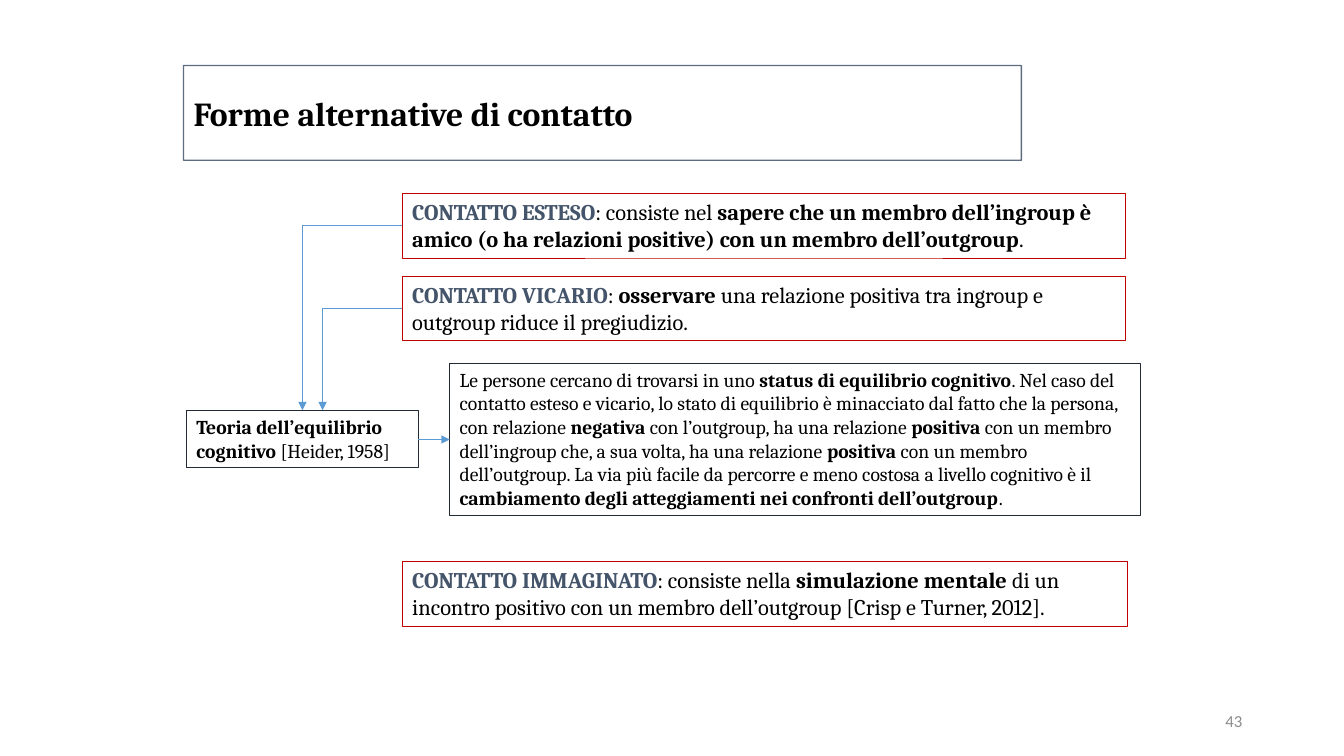
from lxml import etree
from pptx import Presentation
from pptx.dml.color import RGBColor
from pptx.enum.shapes import MSO_CONNECTOR, MSO_SHAPE
from pptx.enum.text import MSO_ANCHOR, MSO_AUTO_SIZE, PP_ALIGN
from pptx.oxml.ns import qn
from pptx.util import Inches, Pt

COLORS = {
    "black": "000000",
    "white": "FFFFFF",
    "slate": "44546A",
    "navy": "222A35",
    "red": "C00000",
    "blue": "5B9BD5",
    "grey": "8C8C8C",
}


def color(name):
    return RGBColor.from_string(COLORS[name])


def write(shape, text, size, font="Cambria", ink="black", bold=False, lead="",
          align=PP_ALIGN.LEFT, anchor=MSO_ANCHOR.TOP, fit=MSO_AUTO_SIZE.NONE):
    """Fill a shape with a coloured bold lead and text whose **parts** toggle bold."""
    frame = shape.text_frame
    frame.word_wrap = True
    frame.auto_size = fit
    frame.vertical_anchor = anchor
    paragraph = frame.paragraphs[0]
    paragraph.alignment = align
    pieces = [(lead, True, "slate")]
    pieces += [(part, bold or index % 2 == 1, ink)
               for index, part in enumerate(text.split("**"))]
    for part, is_bold, part_ink in pieces:
        if part:
            run = paragraph.add_run()
            run.text = part
            run.font.name = font
            run.font.size = Pt(size)
            run.font.bold = is_bold
            run.font.color.rgb = color(part_ink)


class ContactSlide:
    def __init__(self, presentation):
        self.slide = presentation.slides.add_slide(presentation.slide_layouts[5])
        self.shapes = self.slide.shapes

    def outline(self, shape, ink, width):
        shape.line.color.rgb = color(ink)
        shape.line.width = Pt(width)

    def title(self, text, left, top, width, height):
        heading = self.shapes.title
        heading.left, heading.top = Inches(left), Inches(top)
        heading.width, heading.height = Inches(width), Inches(height)
        self.outline(heading, "slate", 1)
        line_color = heading.line._get_or_add_ln().find(".//" + qn("a:srgbClr"))
        etree.SubElement(line_color, qn("a:alpha"), val="86000")
        write(heading, text, 24, bold=True, anchor=MSO_ANCHOR.MIDDLE)

    def box(self, text, left, top, width, height, size=14, ink="navy",
            line_width=0.25, fill=None, lead=""):
        panel = self.shapes.add_shape(MSO_SHAPE.RECTANGLE, Inches(left), Inches(top),
                                      Inches(width), Inches(height))
        panel.shadow.inherit = False
        if fill:
            panel.fill.solid()
            panel.fill.fore_color.rgb = color(fill)
        else:
            panel.fill.background()
        self.outline(panel, ink, line_width)
        write(panel, text, size, lead=lead, fit=MSO_AUTO_SIZE.SHAPE_TO_FIT_TEXT)

    def arrow(self, start, end):
        """Straight arrow on one level, otherwise across and then down."""
        straight = start[1] == end[1]
        kind = MSO_CONNECTOR.STRAIGHT if straight else MSO_CONNECTOR.ELBOW
        link = self.shapes.add_connector(kind, *map(Inches, start + end))
        self.outline(link, "blue", 0.5)
        properties = link._element.spPr
        if not straight:
            properties.find(qn("a:prstGeom")).set("prst", "bentConnector2")
        etree.SubElement(link.line._get_or_add_ln(), qn("a:tailEnd"), type="triangle")
        etree.SubElement(properties, qn("a:effectLst"))

    def page_number(self, text, left, top, width, height):
        number = self.shapes.add_textbox(Inches(left), Inches(top),
                                         Inches(width), Inches(height))
        write(number, text, 12, font="Calibri", ink="grey",
              align=PP_ALIGN.RIGHT, anchor=MSO_ANCHOR.MIDDLE)


CONTACT_LEFT = 3.99
CONTACT_HEIGHT = 0.64
THEORY_TOP = 4.07
THEORY_MIDDLE = 4.36

# lead, definition, top, width, x of the arrow down to the theory
CONTACT_FORMS = [
    ("CONTATTO ESTESO",
     ": consiste nel **sapere che un membro dell’ingroup è amico (o ha relazioni "
     "positive) con un membro dell’outgroup**.", 1.92, 7.17, 3),
    ("CONTATTO VICARIO",
     ": **osservare** una relazione positiva tra ingroup e outgroup riduce il "
     "pregiudizio.", 2.74, 7.17, 3.2),
    ("CONTATTO IMMAGINATO",
     ": consiste nella **simulazione mentale **di un incontro positivo con un membro "
     "dell’outgroup [Crisp e Turner, 2012].", 5.57, 7.19, None),
]

BALANCE = (
    "Le persone cercano di trovarsi in uno **status di equilibrio cognitivo**. Nel caso "
    "del contatto esteso e vicario, lo stato di equilibrio è minacciato dal fatto che la "
    "persona, con relazione **negativa** con l’outgroup, ha una relazione **positiva** con "
    "un membro dell’ingroup che, a sua volta, ha una relazione **positiva** con un membro "
    "dell’outgroup. La via più facile da percorre e meno costosa a livello cognitivo è il "
    "**cambiamento degli atteggiamenti nei confronti dell’outgroup**."
)


def main():
    presentation = Presentation()
    presentation.slide_width = Inches(13.33)
    presentation.slide_height = Inches(7.5)
    slide = ContactSlide(presentation)

    slide.title("Forme alternative di contatto", 1.82, 0.65, 8.31, 0.94)
    slide.box("**Teoria dell’equilibrio cognitivo **[Heider, 1958]",
              1.85, THEORY_TOP, 2.3, 0.57, line_width=1, fill="white")
    slide.box(BALANCE, 4.46, 3.6, 6.85, 1.51)
    slide.arrow((4.15, THEORY_MIDDLE), (4.46, THEORY_MIDDLE))
    for lead, definition, top, width, arrow_x in CONTACT_FORMS:
        slide.box(definition, CONTACT_LEFT, top, width, CONTACT_HEIGHT,
                  size=16, ink="red", lead=lead)
        if arrow_x:
            slide.arrow((CONTACT_LEFT, top + CONTACT_HEIGHT / 2), (arrow_x, THEORY_TOP))
    slide.page_number("43", 9.42, 6.95, 3, 0.4)

    presentation.save("out.pptx")


if __name__ == "__main__":
    main()
